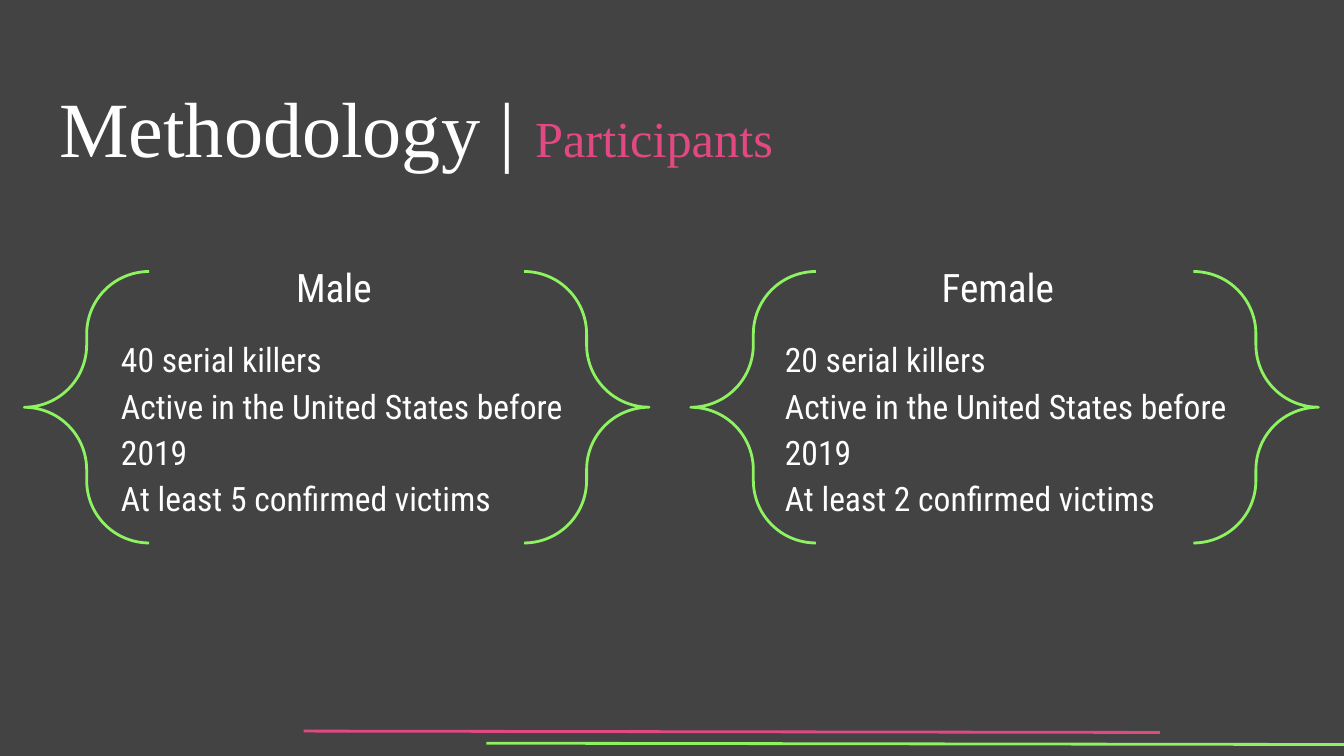
"""Build the Methodology participants slide with two braced groups."""
from dataclasses import dataclass

from lxml import etree
from pptx import Presentation
from pptx.dml.color import RGBColor
from pptx.enum import shapes, text
from pptx.oxml.ns import qn
from pptx.util import Inches, Pt

COLORS = {"bg": "434343", "text": "FFFFFF", "green": "8DF361", "pink": "E24983"}
SERIF, SANS = "Times New Roman", "Roboto Condensed"


@dataclass
class Group:
    name: str
    count: int
    victims: int
    left: float
    height: float
    brace_left: float
    brace_right: float


@dataclass
class Rule:
    x1: float
    y1: float
    x2: float
    y2: float
    color: str


GROUPS = [
    Group("Male", 40, 5, 0.3, 5.87, 0.18, 3.9),
    Group("Female", 20, 2, 5.24, 5.62, 5.14, 8.88),
]
RULES = [
    Rule(3.62, 5.53, 10, 5.54, "green"),
    Rule(2.26, 5.44, 8.63, 5.45, "pink"),
]


def rgb(name: str) -> RGBColor:
    return RGBColor.from_string(COLORS[name])


def add_text(p, content: str, *, size: float, font: str = SANS, color: str = "text") -> None:
    r = p.add_run()
    r.text = content
    r.font.size, r.font.name = Pt(size), font
    r.font.color.rgb = rgb(color)


def place(sp, left: float, top: float, width: float, height: float, inset_top: float = 0.1):
    sp.left, sp.top, sp.width, sp.height = map(Inches, (left, top, width, height))
    tf = sp.text_frame
    tf.margin_left = tf.margin_right = tf.margin_bottom = Inches(0.1)
    tf.margin_top = Inches(inset_top)
    tf.word_wrap = True
    tf.auto_size = text.MSO_AUTO_SIZE.NONE
    tf.vertical_anchor = text.MSO_ANCHOR.TOP
    return tf


def add_title(s) -> None:
    p = place(s.shapes.title, 0.34, 0.49, 9.32, 0.63).paragraphs[0]
    p.alignment = text.PP_ALIGN.LEFT
    add_text(p, "Methodology | ", size=41.9, font=SERIF)
    add_text(p, "Participants", size=27, font=SERIF, color="pink")


def add_body(sp, group: Group) -> None:
    tf = place(sp, group.left, -0.41, 4.37, group.height, inset_top=2.32)
    lines = [
        group.name,
        f"{group.count} serial killers",
        "Active in the United States before 2019",
        f"At least {group.victims} confirmed victims",
    ]
    for i, line in enumerate(lines):
        p = tf.add_paragraph() if i else tf.paragraphs[0]
        p.alignment = text.PP_ALIGN.LEFT if i else text.PP_ALIGN.CENTER
        p.line_spacing = 1.15
        p.space_before = Pt(12 if i == 1 else 0)
        p.space_after = Pt(0)
        pPr = p._p.get_or_add_pPr()
        pPr.set("marL", str(Inches(0.5 if i else 0)))
        pPr.set("indent", "0")
        etree.SubElement(pPr, qn("a:buNone"))
        add_text(p, line, size=18 if i else 21)


def add_brace(s, left: float, rotation: float) -> None:
    sp = s.shapes.add_shape(shapes.MSO_SHAPE.RIGHT_BRACE, Inches(left), Inches(2.02),
                            Inches(0.93), Inches(2.02))
    sp.adjustments[0] = sp.adjustments[1] = 0.5
    sp.rotation = rotation
    sp.shadow.inherit = False
    sp.fill.background()
    sp.line.color.rgb = rgb("green")
    sp.line.width = Pt(1.5)


def add_rule(s, rule: Rule) -> None:
    ends = map(Inches, (rule.x1, rule.y1, rule.x2, rule.y2))
    line = s.shapes.add_connector(shapes.MSO_CONNECTOR.STRAIGHT, *ends)
    line.line.color.rgb = rgb(rule.color)
    line.line.width = Pt(1.5)
    etree.SubElement(line._element.spPr, qn("a:effectLst"))


def main() -> None:
    prs = Presentation()
    prs.slide_width = Inches(10)
    prs.slide_height = prs.slide_width * 9 // 16
    s = prs.slides.add_slide(prs.slide_layouts[3])
    s.background.fill.solid()
    s.background.fill.fore_color.rgb = rgb("bg")
    add_title(s)
    for idx, group in enumerate(GROUPS, start=1):
        add_body(s.placeholders[idx], group)
    for rotation, side in ((0, "brace_right"), (180, "brace_left")):
        for group in GROUPS:
            add_brace(s, getattr(group, side), rotation)
    for rule in RULES:
        add_rule(s, rule)
    prs.save("out.pptx")


if __name__ == "__main__":
    main()
